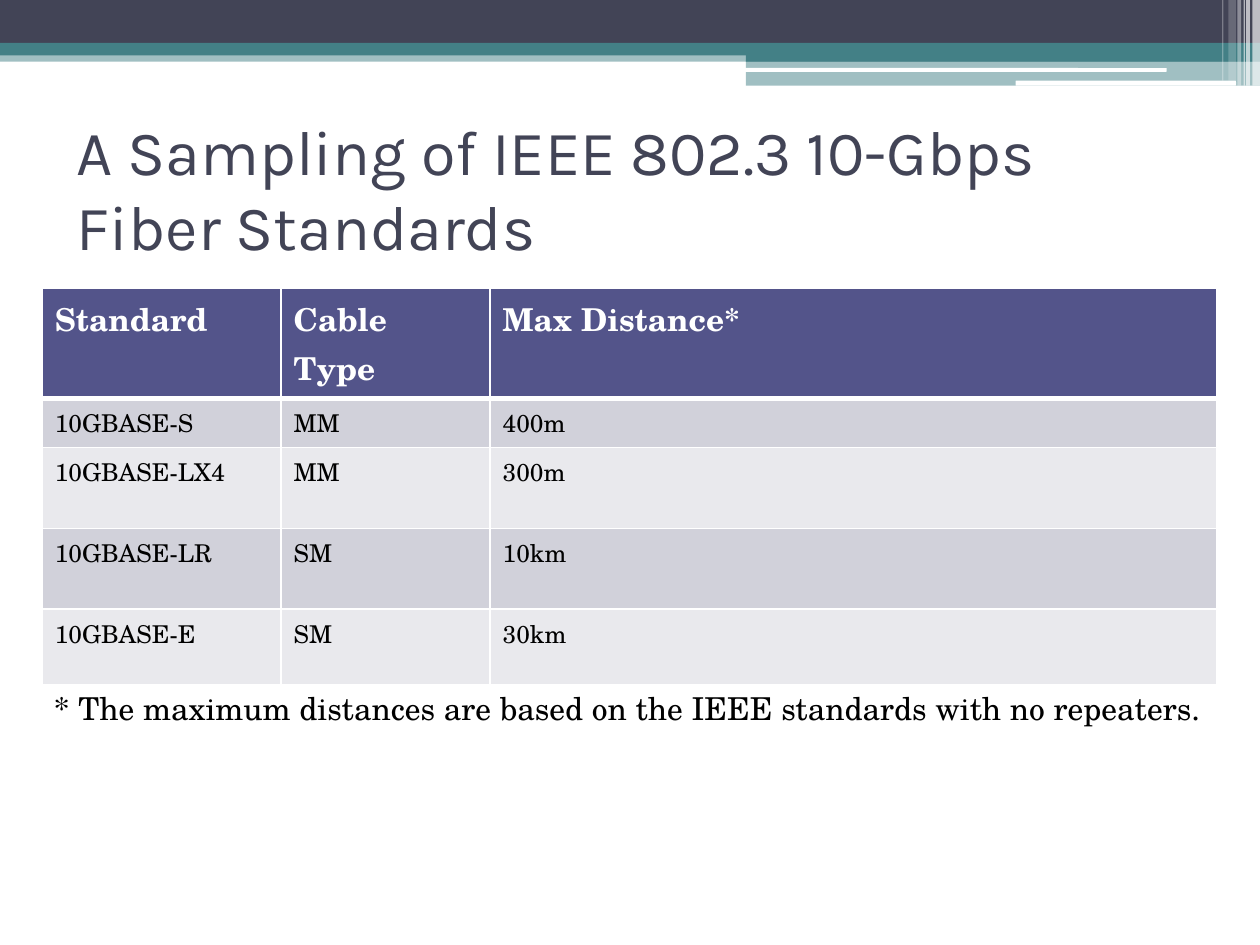
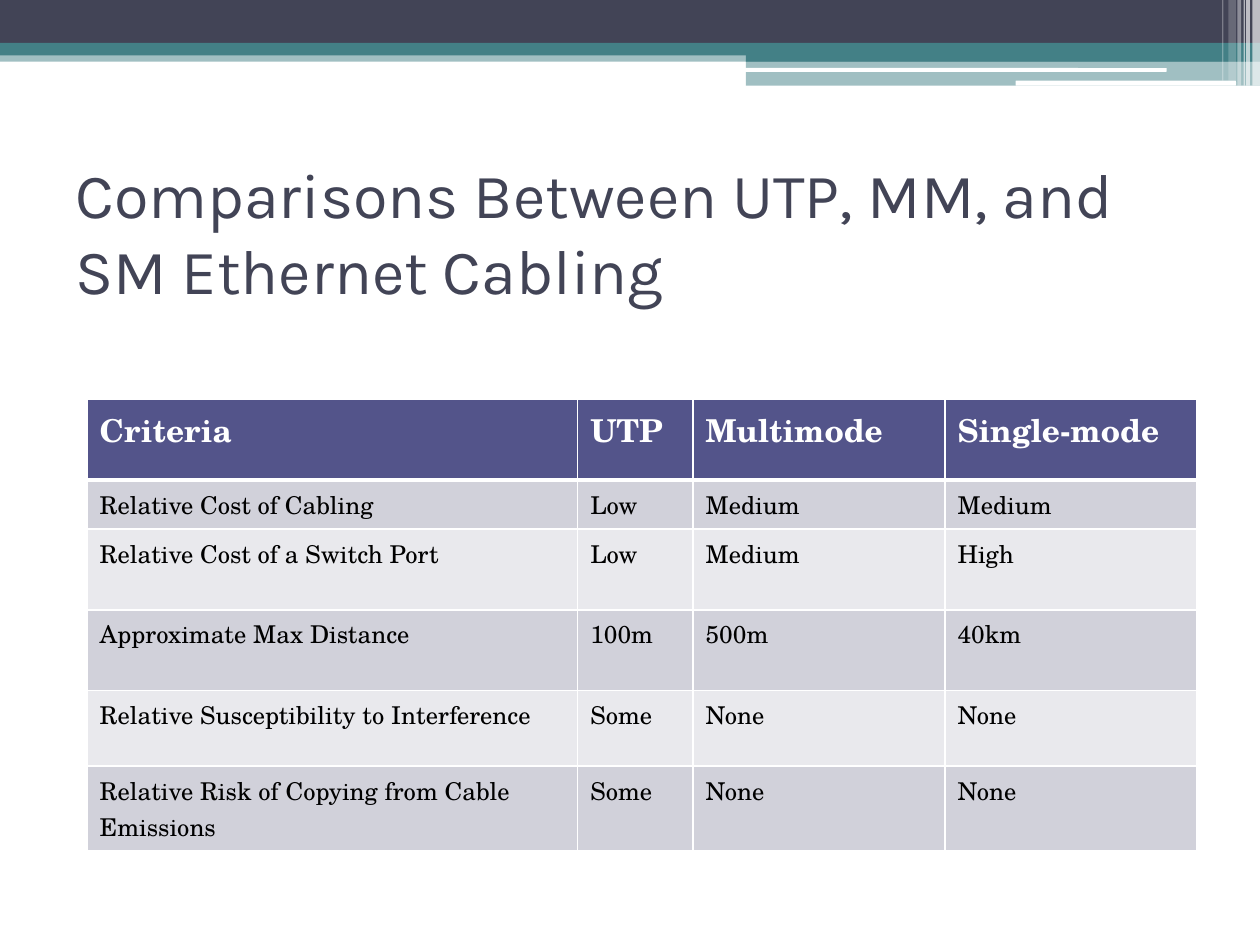
"""Builds two slides that compare Ethernet cabling standards."""
from dataclasses import dataclass

from lxml import etree
from pptx import Presentation
from pptx.dml.color import RGBColor
from pptx.enum.shapes import MSO_SHAPE
from pptx.enum.text import MSO_ANCHOR, MSO_AUTO_SIZE, PP_ALIGN
from pptx.oxml.ns import qn
from pptx.util import Inches, Pt

RECT, ROUNDED = MSO_SHAPE.RECTANGLE, MSO_SHAPE.ROUNDED_RECTANGLE
MIDDLE, LEFT, FIXED = MSO_ANCHOR.MIDDLE, PP_ALIGN.LEFT, MSO_AUTO_SIZE.NONE
GRID_COLUMNS, GRID_ROWS = 100, 75
TITLE_ONLY = 5


@dataclass(frozen=True)
class Theme:
    ink: str = "424456"
    teal: str = "438086"
    white: str = "FFFFFF"
    black: str = "000000"
    header: str = "53548A"
    bands: tuple = ("D1D1DA", "E9E9ED")
    title_font: str = "Karla"
    body_font: str = "TeX Gyre Schola"
    title_size: int = 36
    lead_size: int = 18
    cell_size: int = 14
    rule: int = 1
    header_rule: int = 3


THEME = Theme()

BANDS = [
    (RECT, (0, 4, 100, 0.9), THEME.teal, 50),
    (RECT, (0, 0, 100, 3.4), THEME.ink, 100),
    (RECT, (0, 3.4, 100, 1), THEME.teal, 100),
    (RECT, (59.2, 3.9, 40.8, 1), THEME.teal, 100),
    (RECT, (59.2, 4.8, 40.8, 2), THEME.teal, 50),
    (ROUNDED, (59.1, 5.4, 33.5, 0.3), THEME.white, 100),
    (ROUNDED, (80.6, 6.4, 17.5, 0.4), THEME.white, 100),
]
STRIPES = [
    (99.4, 0.6, 6.8, 65),
    (98.9, 0.3, 6.8, 65),
    (98.7, 0.1, 6.8, 60),
    (98.2, 0.3, 6.8, 40),
    (97.5, 0.6, 6.4, 20),
    (97, 0.1, 6.4, 30),
]
FIBER_STANDARDS = [
    ("Standard", "Cable Type", "Max Distance*"),
    ("10GBASE-S", "MM", "400m"),
    ("10GBASE-LX4", "MM", "300m"),
    ("10GBASE-LR", "SM", "10km"),
    ("10GBASE-E", "SM", "30km"),
]
CABLING_COMPARISON = [
    ("Criteria", "UTP", "Multimode", "Single-mode"),
    ("Relative Cost of Cabling", "Low", "Medium", "Medium"),
    ("Relative Cost of a Switch Port", "Low", "Medium", "High"),
    ("Approximate Max Distance", "100m", "500m", "40km"),
    ("Relative Susceptibility to Interference", "Some", "None", "None"),
    ("Relative Risk of Copying from Cable Emissions", "Some", "None", "None"),
]
ROW_HEIGHTS = (6.4, 3.9, 6.4, 6.4, 6, 6)


class Deck:
    """Holds the theme and the current slide, and draws each kind of element."""

    def __init__(self, theme):
        self.theme = theme
        self.file = Presentation()
        self.file.slide_width, self.file.slide_height = Inches(10), Inches(7.5)
        self.slide = None

    def across(self, columns):
        return round(self.file.slide_width * columns / GRID_COLUMNS)

    def down(self, rows):
        return round(self.file.slide_height * rows / GRID_ROWS)

    def place(self, area):
        left, top, width, height = area
        return self.across(left), self.down(top), self.across(width), self.down(height)

    def style(self, frame, font, size, color, bold=False):
        for paragraph in frame.paragraphs:
            paragraph.alignment = LEFT
            for run in paragraph.runs:
                run.font.name, run.font.size, run.font.bold = font, Pt(size), bold
                run.font.color.rgb = RGBColor.from_string(color)

    def band(self, form, area, color, opacity):
        band = self.slide.shapes.add_shape(form, *self.place(area))
        band.shadow.inherit = False
        band.line.fill.background()
        band.fill.solid()
        band.fill.fore_color.rgb = RGBColor.from_string(color)
        if opacity < 100:
            tint = band.fill._xPr.find(qn("a:solidFill"))[0]
            etree.SubElement(tint, qn("a:alpha"), val=str(opacity * 1000))

    def new_slide(self, heading, area):
        self.slide = self.file.slides.add_slide(self.file.slide_layouts[TITLE_ONLY])
        for band in BANDS:
            self.band(*band)
        for left, width, height, opacity in STRIPES:
            self.band(RECT, (left, 0, width, height), self.theme.white, opacity)
        title = self.slide.shapes.title
        title.left, title.top, title.width, title.height = self.place(area)
        frame = title.text_frame
        frame.text = heading
        frame.word_wrap, frame.auto_size, frame.vertical_anchor = True, FIXED, MIDDLE
        self.style(frame, self.theme.title_font, self.theme.title_size, self.theme.ink)

    def borders(self, cell, top, bottom):
        properties = cell._tc.get_or_add_tcPr()
        widths = {"lnL": self.theme.rule, "lnR": self.theme.rule, "lnT": top, "lnB": bottom}
        for position, (side, width) in enumerate(widths.items()):
            line = etree.Element(qn(f"a:{side}"), w=str(Pt(width)))
            fill = etree.SubElement(line, qn("a:solidFill"))
            etree.SubElement(fill, qn("a:srgbClr"), val=self.theme.white)
            properties.insert(position, line)

    def cell(self, cell, text, row):
        theme = self.theme
        heading = row == 0
        cell.text = text
        cell.fill.solid()
        fill = theme.header if heading else theme.bands[(row - 1) % 2]
        cell.fill.fore_color.rgb = RGBColor.from_string(fill)
        self.style(cell.text_frame, theme.body_font,
                   theme.lead_size if heading else theme.cell_size,
                   theme.white if heading else theme.black, heading)
        self.borders(cell, theme.header_rule if row == 1 else theme.rule,
                     theme.header_rule if heading else theme.rule)

    def table(self, records, left, top, widths):
        heights = ROW_HEIGHTS[:len(records)]
        area = self.place((left, top, sum(widths), sum(heights)))
        table = self.slide.shapes.add_table(len(records), len(widths), *area).table
        for column, width in zip(table.columns, widths):
            column.width = self.across(width)
        for row, height in zip(table.rows, heights):
            row.height = self.down(height)
        for row, record in enumerate(records):
            for column, text in enumerate(record):
                self.cell(table.cell(row, column), text, row)

    def footnote(self, text, area):
        frame = self.slide.shapes.add_textbox(*self.place(area)).text_frame
        frame.text = text
        frame.word_wrap = True
        self.style(frame, self.theme.body_font, self.theme.lead_size, self.theme.black)


def main():
    deck = Deck(THEME)
    deck.new_slide("A Sampling of IEEE 802.3 10-Gbps Fiber Standards", (5.1, 10, 87.5, 9.8))
    deck.table(FIBER_STANDARDS, 3.35, 22.9, (18.95, 16.6, 57.7))
    deck.footnote("* The maximum distances are based on the IEEE standards with no repeaters.",
                  (3.3, 54.2, 93.3, 4))
    deck.new_slide("Comparisons Between UTP, MM, and SM Ethernet Cabling", (5, 12.5, 90, 11.7))
    deck.table(CABLING_COMPARISON, 6.9, 31.7, (38.95, 9.15, 20, 20))
    deck.file.save("out.pptx")


if __name__ == "__main__":
    main()
